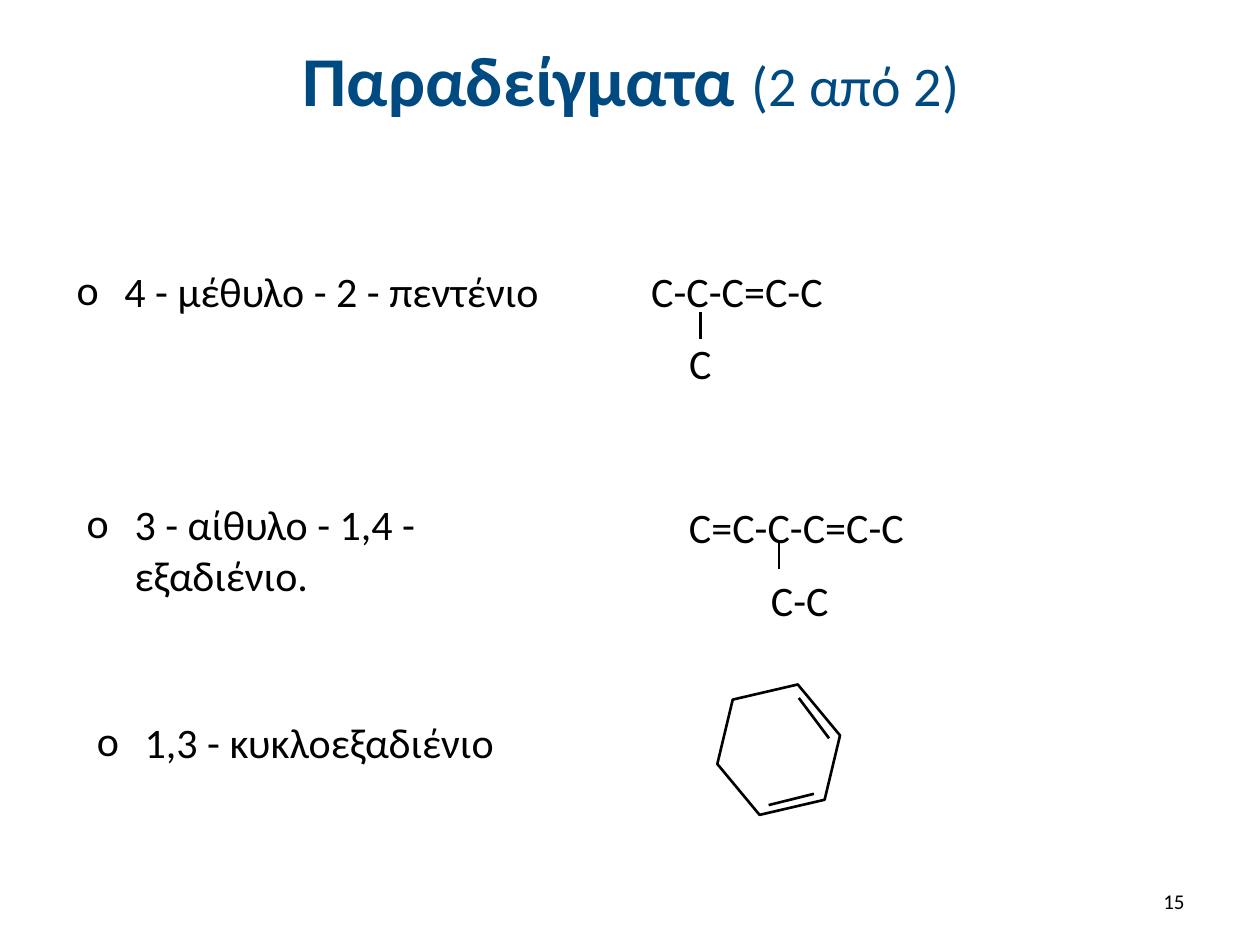
from pptx import Presentation
from pptx.dml.color import RGBColor
from pptx.enum.shapes import MSO_CONNECTOR as Connector, MSO_SHAPE as Shape
from pptx.enum.text import MSO_ANCHOR as Anchor, PP_ALIGN as Align
from pptx.oxml.ns import qn
from pptx.util import Inches, Pt
from lxml.etree import SubElement

COLORS = {"title": "004A82", "ink": "000000", "paper": "FFFFFF"}
FONT = "Calibri"
COLUMNS, ROWS = 100, 75
INDENT = Inches(0.38)


class SlideBuilder:
    """Holds the style and the current slide; places are grid columns and rows."""

    def __init__(self, deck):
        self.column = deck.slide_width / COLUMNS
        self.row = deck.slide_height / ROWS
        self.page = deck.slides.add_slide(deck.slide_layouts[5])
        self.page.background.fill.solid()
        self.page.background.fill.fore_color.rgb = self.color("paper")

    def color(self, name):
        return RGBColor.from_string(COLORS[name])

    def place(self, *lengths):
        units = (self.column, self.row) * 2
        return [round(length * unit) for length, unit in zip(lengths, units)]

    def format_span(self, span, size, color="ink", bold=False):
        span.font.name = FONT
        span.font.size = Pt(size)
        span.font.bold = bold
        span.font.color.rgb = self.color(color)

    def title(self, spans, *at):
        box = self.page.shapes.title
        box.left, box.top, box.width, box.height = self.place(*at)
        box.text_frame.vertical_anchor = Anchor.MIDDLE
        para = box.text_frame.paragraphs[0]
        para.alignment = Align.CENTER
        for words, size, bold in spans:
            span = para.add_run()
            span.text = words
            self.format_span(span, size, "title", bold)

    def text(self, words, *at, size=24, align=Align.LEFT, anchor=Anchor.TOP):
        box = self.page.shapes.add_textbox(*self.place(*at))
        frame = box.text_frame
        frame.word_wrap = True
        frame.vertical_anchor = anchor
        frame.text = words
        para = frame.paragraphs[0]
        para.alignment = align
        self.format_span(para.runs[0], size)
        return para

    def bullet(self, words, *at):
        properties = self.text(words, *at)._p.get_or_add_pPr()
        properties.set("marL", str(INDENT))
        properties.set("indent", str(-INDENT))
        SubElement(properties, qn("a:buFont")).set("typeface", FONT)
        SubElement(properties, qn("a:buChar")).set("char", "o")

    def bond(self, *ends, width=1.25):
        line = self.page.shapes.add_connector(Connector.STRAIGHT, *self.place(*ends))
        line.line.color.rgb = self.color("ink")
        line.line.width = Pt(width)
        SubElement(line._element.spPr, qn("a:effectLst"))

    def ring(self, *at, rotation):
        hexagon = self.page.shapes.add_shape(Shape.HEXAGON, *self.place(*at))
        hexagon.rotation = rotation
        hexagon.shadow.inherit = False
        hexagon.fill.background()
        hexagon.line.color.rgb = self.color("ink")
        hexagon.line.width = Pt(1.5)


def main():
    deck = Presentation()
    deck.slide_width, deck.slide_height = Inches(10), Inches(7.5)
    slide = SlideBuilder(deck)

    # Title
    slide.title([("Παραδείγματα ", 40, True), ("(2 από 2)", 32, False)],
                5.1, 1.3, 90, 9.9)

    # Compound names
    slide.bullet("4 - μέθυλο - 2 - πεντένιο", 5.1, 20.6, 40.3, 5.5)
    slide.bullet("3 - αίθυλο - 1,4 - εξαδιένιο.", 5.9, 39.1, 42, 7.9)
    slide.bullet("1,3 - κυκλοεξαδιένιο", 6.7, 56.4, 33.9, 7.9)

    # Chains with their side branches
    slide.text("C-C-C=C-C", 50.7, 20.6, 17, 6.3)
    slide.bond(55.6, 24.8, 55.6, 26.9)
    slide.text("C", 53.7, 26.3, 3.9, 5)
    slide.text("C=C-C-C=C-C", 53.7, 39.3, 20, 7.6)
    slide.bond(61.8, 43.1, 61.8, 45.2)
    slide.text("C-C", 60.2, 45.1, 6.9, 5)

    # Ring with two double bonds
    slide.ring(56.8, 54.8, 10, 9.4, rotation=346.9)
    for ends in ((63.4, 55.4, 65.8, 58.6), (61, 63.9, 64.6, 63)):
        slide.bond(*ends, width=1.5)

    # Page number
    slide.text("15", 71.7, 69.5, 23.3, 4, size=12,
               align=Align.RIGHT, anchor=Anchor.MIDDLE)

    deck.save("out.pptx")


if __name__ == "__main__":
    main()
